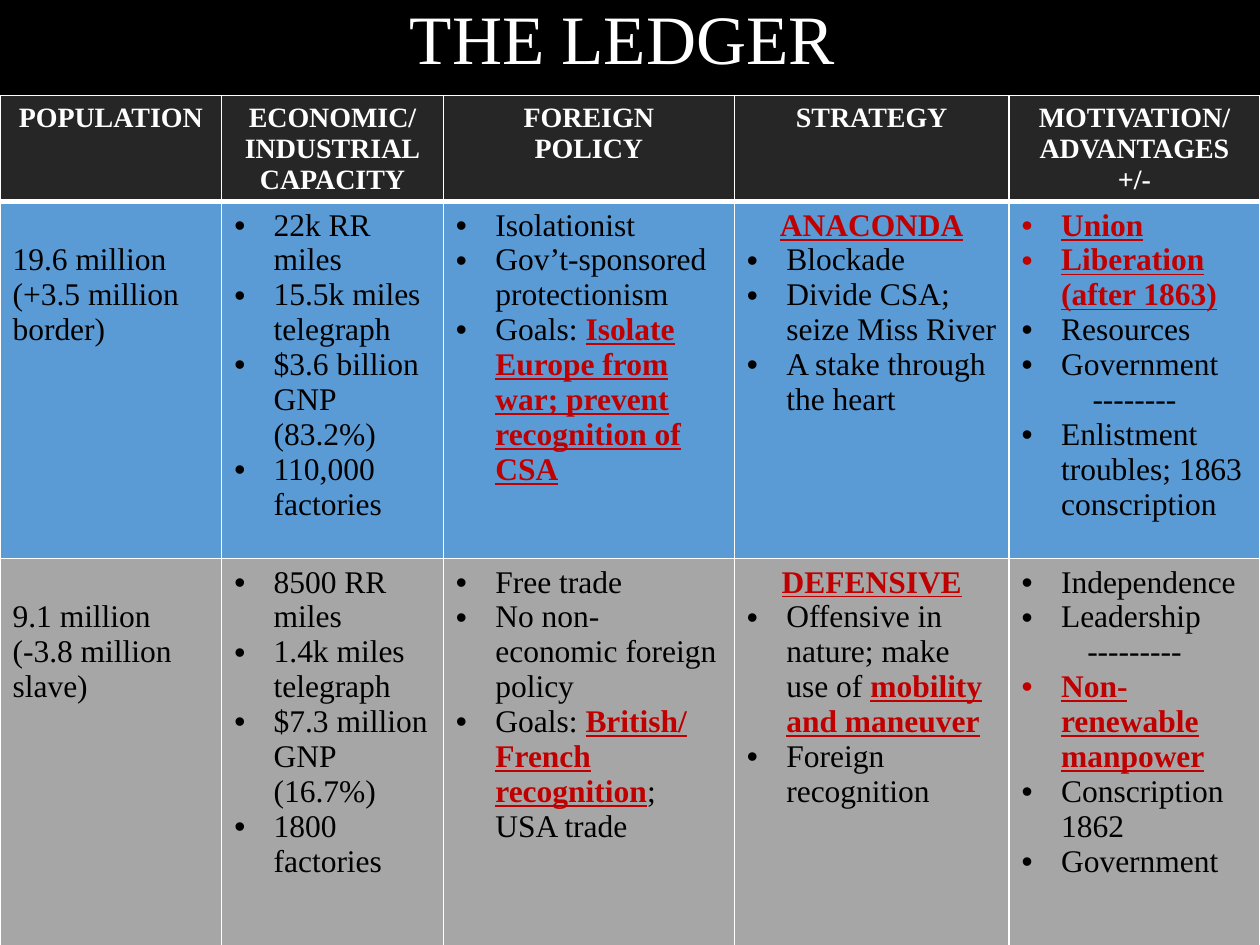
from pptx import Presentation
from pptx.dml.color import RGBColor
from pptx.enum.text import MSO_ANCHOR, MSO_AUTO_SIZE, PP_ALIGN
from pptx.oxml import parse_xml
from pptx.oxml.ns import nsdecls
from pptx.util import Pt

FONT = "Times New Roman"
WHITE, BLACK, RED = "FFFFFF", "000000", "C00000"


def color(value):
    return RGBColor.from_string(value)


def write(paragraph, text, size=18, ink=BLACK, bold=False, align=PP_ALIGN.LEFT, bullet=False):
    paragraph.alignment = align
    if bullet:
        properties = paragraph._p.get_or_add_pPr()
        properties.set("marL", str(Pt(22.5)))
        properties.set("indent", str(Pt(-22.5)))
        bullet_ink = RED if text.startswith("*") else ink
        for element in (
            f'<a:buClr {nsdecls("a")}><a:srgbClr val="{bullet_ink}"/></a:buClr>',
            f'<a:buFont {nsdecls("a")} typeface="Arial"/>',
            f'<a:buChar {nsdecls("a")} char="•"/>',
        ):
            properties.append(parse_xml(element))
    for position, part in enumerate(text.split("*")):
        if part:
            emphasis = position % 2 == 1
            run = paragraph.add_run()
            run.text = part
            run.font.name = FONT
            run.font.size = Pt(size)
            run.font.bold = bold or emphasis
            run.font.underline = emphasis
            run.font.color.rgb = color(RED if emphasis else ink)


presentation = Presentation()
presentation.slide_width = Pt(720)
presentation.slide_height = Pt(540)
slide = presentation.slides.add_slide(presentation.slide_layouts[5])
slide.background.fill.solid()
slide.background.fill.fore_color.rgb = color(BLACK)

title = slide.shapes.title
title.left, title.top, title.width, title.height = Pt(-8.6), Pt(0), Pt(728.6), Pt(48)
frame = title.text_frame
frame.auto_size = MSO_AUTO_SIZE.NONE
frame.vertical_anchor = MSO_ANCHOR.MIDDLE
frame.paragraphs[0].line_spacing = 0.9
write(frame.paragraphs[0], "THE LEDGER", size=39.6, ink=WHITE, align=PP_ALIGN.CENTER)

headings = [
    ["POPULATION"],
    ["ECONOMIC/", "INDUSTRIAL", "CAPACITY"],
    ["FOREIGN", "POLICY"],
    ["STRATEGY"],
    ["MOTIVATION/", "ADVANTAGES", "+/-"],
]
union = [
    ["19.6 million", "(+3.5 million border)"],
    ["22k RR miles", "15.5k miles telegraph", "$3.6 billion GNP (83.2%)", "110,000 factories"],
    ["Isolationist", "Gov’t-sponsored protectionism",
     "Goals: *Isolate Europe from war; prevent recognition of CSA*"],
    ["*ANACONDA*", "Blockade", "Divide CSA; seize Miss River", "A stake through the heart"],
    ["*Union*", "*Liberation (after 1863)*", "Resources", "Government", "--------",
     "Enlistment troubles; 1863 conscription"],
]
confederacy = [
    ["9.1 million", "(-3.8 million slave)"],
    ["8500 RR miles", "1.4k miles telegraph", "$7.3 million GNP (16.7%)", "1800 factories"],
    ["Free trade", "No non-economic foreign policy",
     "Goals: *British/ French recognition*; USA trade"],
    ["*DEFENSIVE*", "Offensive in nature; make use of *mobility and maneuver*",
     "Foreign recognition"],
    ["Independence", "Leadership", "---------", "*Non-renewable manpower*",
     "Conscription 1862", "Government"],
]
rows = [(headings, "262626", 60), (union, "5B9BD5", 204), (confederacy, "A6A6A6", 247)]
column_widths = [126.7, 126.7, 166.3, 157, 143.3]
centered_lines = {"*ANACONDA*", "*DEFENSIVE*", "--------", "---------"}

table = slide.shapes.add_table(3, 5, Pt(0), Pt(54.7), Pt(720), Pt(511)).table
for column, width in zip(table.columns, column_widths):
    column.width = Pt(width)

for row_index, (row_cells, fill, height) in enumerate(rows):
    table.rows[row_index].height = Pt(height)
    is_header = row_index == 0
    for column_index, lines in enumerate(row_cells):
        cell = table.cell(row_index, column_index)
        is_population = column_index == 0
        if is_population and not is_header:
            cell.margin_top = Pt(23.5)
        for line_index, line in enumerate(lines):
            frame = cell.text_frame
            paragraph = frame.add_paragraph() if line_index else frame.paragraphs[0]
            if is_header:
                write(paragraph, line, size=16, ink=WHITE, bold=True, align=PP_ALIGN.CENTER)
            elif line in centered_lines:
                write(paragraph, line, align=PP_ALIGN.CENTER)
            else:
                write(paragraph, line, bullet=not is_population)
        cell_properties = cell._tc.get_or_add_tcPr()
        thick_side = ("B", "T", None)[row_index]
        for side in "LRTB":
            weight = Pt(3 if side == thick_side else 1)
            cell_properties.append(parse_xml(
                f'<a:ln{side} {nsdecls("a")} w="{weight}"><a:solidFill>'
                f'<a:srgbClr val="{WHITE}"/></a:solidFill></a:ln{side}>'))
        cell.fill.solid()
        cell.fill.fore_color.rgb = color(fill)

presentation.save("out.pptx")
